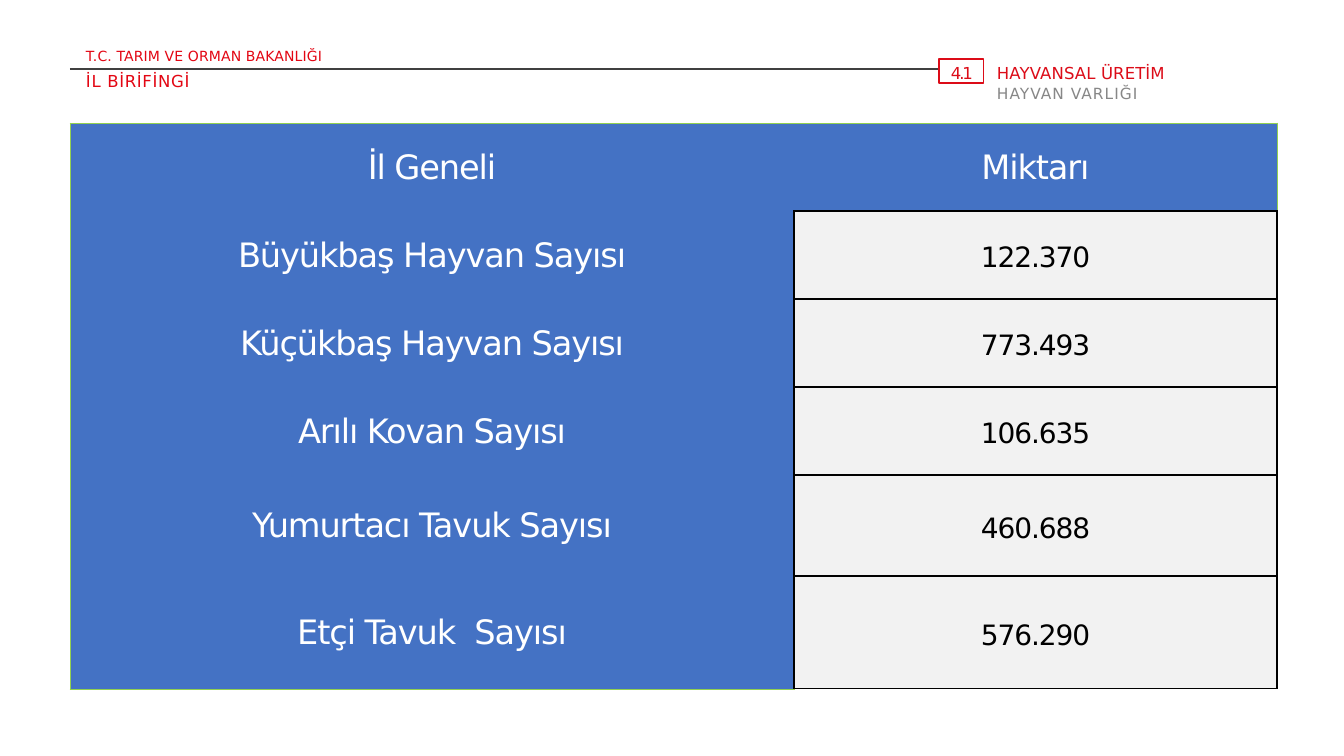
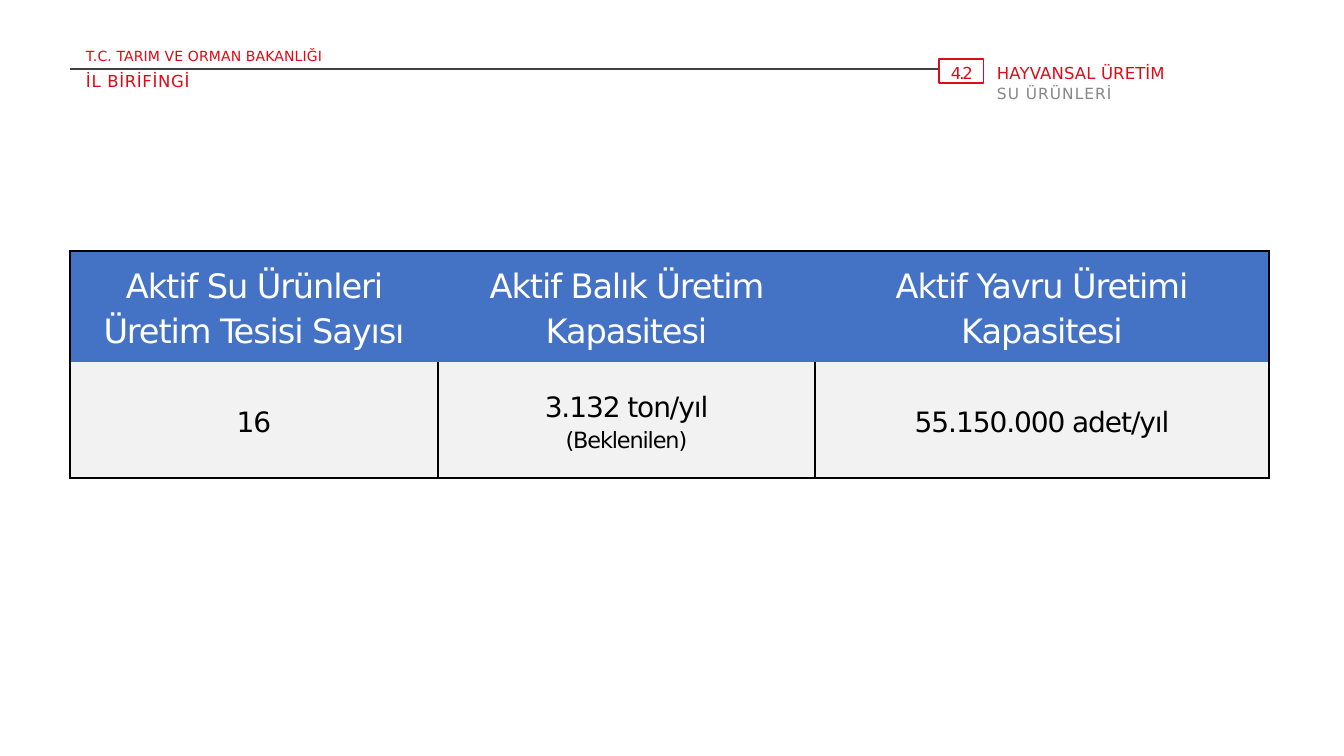
from lxml.etree import SubElement
from pptx import Presentation
from pptx.dml.color import RGBColor
from pptx.enum.shapes import MSO_CONNECTOR, MSO_SHAPE
from pptx.enum.text import MSO_ANCHOR, MSO_AUTO_SIZE, PP_ALIGN
from pptx.oxml.ns import qn
from pptx.util import Emu, Pt

PX_PER_INCH = 100.8
FONT = "DejaVu Sans"
COLORS = {
    "ministry": "E30613",
    "red": "DC0C18",
    "rule": "404040",
    "gray": "878787",
    "blue": "4472C4",
    "pale": "F2F2F2",
    "green": "92D050",
    "white": "FFFFFF",
    "black": "000000",
}
BLACK_EDGE = ("black", 1)
GREEN_EDGE = ("green", 0.5)
HEADING = {"size": 24, "color": "white", "spacing": -0.8, "align": PP_ALIGN.CENTER}
VALUE = {"size": 20, "color": "black", "spacing": -0.8, "align": PP_ALIGN.CENTER,
         "line_spacing": 1.15}


def px(length):
    return Emu(round(length * 914400 / PX_PER_INCH))


def rgb(name):
    return RGBColor.from_string(COLORS[name])


def add_text(frame, text, size, color, spacing=0, align=PP_ALIGN.LEFT,
             line_spacing=1.0, space_before=0):
    """Write one paragraph, using the frame's first one while it is empty."""
    para = frame.paragraphs[0]
    if para.runs:
        para = frame.add_paragraph()
    para.alignment = align
    para.line_spacing = line_spacing
    para.space_before = Pt(space_before)
    span = para.add_run()
    span.text = text
    span.font.name = FONT
    span.font.size = Pt(size)
    span.font.bold = False
    span.font.color.rgb = rgb(color)
    span._r.get_or_add_rPr().set("spc", str(round(spacing * 100)))


def set_frame(frame, left=0, top=1):
    frame.word_wrap = True
    frame.auto_size = MSO_AUTO_SIZE.NONE
    frame.vertical_anchor = MSO_ANCHOR.TOP
    frame.margin_left, frame.margin_top = px(left), px(top)
    frame.margin_right = frame.margin_bottom = 0


def add_label(slide, bounds, text, **text_format):
    box = slide.shapes.add_textbox(*map(px, bounds))
    set_frame(box.text_frame)
    add_text(box.text_frame, text, **text_format)


def add_rule(slide, left, right, top):
    rule = slide.shapes.add_connector(
        MSO_CONNECTOR.STRAIGHT, px(left), px(top), px(right), px(top))
    rule.line.color.rgb = rgb("rule")
    rule.line.width = Pt(0.82)
    SubElement(rule._element.spPr, qn("a:effectLst"))


def add_number_box(slide, number):
    box = slide.shapes.add_shape(MSO_SHAPE.RECTANGLE, *map(px, (939, 59, 45, 24)))
    box.shadow.inherit = False
    box.fill.background()
    box.line.color.rgb = rgb("red")
    box.line.width = Pt(0.82)
    set_frame(box.text_frame, left=12, top=4)
    add_text(box.text_frame, number, size=11.8, color="red", spacing=-2.6)


def set_title(slide, heading, subheading):
    title = slide.shapes.title
    title.left, title.top, title.width, title.height = map(px, (997, 62, 347, 42))
    set_frame(title.text_frame)
    add_text(title.text_frame, heading, size=11.8, color="red", spacing=0.1)
    add_text(title.text_frame, subheading, size=11, color="gray", spacing=0.7,
             space_before=0.8)


def add_page(deck, number, subheading):
    """Add a slide with the shared header band."""
    slide = deck.slides.add_slide(deck.slide_layouts[5])
    add_label(slide, (86, 47, 247, 19), "T.C. TARIM VE ORMAN BAKANLIĞI",
              size=10, color="ministry", spacing=0.1)
    add_label(slide, (86, 70, 256, 21), "İL BİRİFİNGİ",
              size=11.8, color="ministry", spacing=0.5)
    add_rule(slide, 70, 939, 69)
    set_title(slide, "HAYVANSAL ÜRETİM", subheading)
    add_number_box(slide, number)
    return slide


def add_grid(slide, left, top, columns, rows):
    """Add an unbanded table with the given column widths and row heights."""
    shape = slide.shapes.add_table(len(rows), len(columns), px(left), px(top),
                                   px(sum(columns)), px(sum(rows)))
    table = shape.table
    table.first_row = table.horz_banding = False
    for column, width in zip(table.columns, columns):
        column.width = px(width)
    for row, height in zip(table.rows, rows):
        row.height = px(height)
    return table


def set_borders(cell, edges):
    """Draw the edges named L, R, T and B; leave the others open."""
    properties = cell._tc.get_or_add_tcPr()
    for side in "LRTB":
        line = SubElement(properties, qn(f"a:ln{side}"))
        if side in edges:
            color, width = edges[side]
            line.set("w", str(Pt(width)))
            fill = SubElement(line, qn("a:solidFill"))
            SubElement(fill, qn("a:srgbClr")).set("val", COLORS[color])
        else:
            SubElement(line, qn("a:noFill"))


def fill_cell(cell, fill, edges, lines, margins):
    """Format a cell; lines holds pairs of text and text format."""
    set_borders(cell, edges)
    cell.fill.solid()
    cell.fill.fore_color.rgb = rgb(fill)
    cell.vertical_anchor = MSO_ANCHOR.MIDDLE
    side, top = margins
    cell.margin_left = cell.margin_right = px(side)
    cell.margin_top, cell.margin_bottom = px(top), 0
    for text, text_format in lines:
        add_text(cell.text_frame, text, **text_format)


def add_livestock_table(slide):
    records = [
        ("İl Geneli", "Miktarı"),
        ("Büyükbaş Hayvan Sayısı", "122.370"),
        ("Küçükbaş Hayvan Sayısı", "773.493"),
        ("Arılı Kovan Sayısı", "106.635"),
        ("Yumurtacı Tavuk Sayısı", "460.688"),
        ("Etçi Tavuk  Sayısı", "576.290"),
    ]
    table = add_grid(slide, 70, 123, [724, 483], [88] * 4 + [101, 113])
    last = len(records) - 1
    for index, (label, amount) in enumerate(records):
        label_edges = {"L": GREEN_EDGE}
        if index == 0:
            label_edges["T"] = GREEN_EDGE
            amount_edges = {"T": GREEN_EDGE, "R": GREEN_EDGE, "B": BLACK_EDGE}
            amount_fill, amount_format = "blue", HEADING
        else:
            label_edges["R"] = BLACK_EDGE
            amount_edges = dict.fromkeys("LRTB", BLACK_EDGE)
            amount_fill, amount_format = "pale", VALUE
        if index == last:
            label_edges["B"] = GREEN_EDGE
        fill_cell(table.cell(index, 0), "blue", label_edges,
                  [(label, HEADING)], (1, 1))
        fill_cell(table.cell(index, 1), amount_fill, amount_edges,
                  [(amount, amount_format)], (1, 1))


def add_fishery_table(slide):
    heading = {**HEADING, "line_spacing": 1.15}
    note = {**VALUE, "size": 16}
    columns = [
        ([("Aktif Su Ürünleri Üretim Tesisi Sayısı", heading)],
         [("16", VALUE)]),
        ([("Aktif Balık Üretim Kapasitesi", heading)],
         [("3.132 ton/yıl", VALUE), ("(Beklenilen)", note)]),
        ([("Aktif Yavru Üretimi", heading), ("Kapasitesi", heading)],
         [("55.150.000 adet/yıl", VALUE)]),
    ]
    table = add_grid(slide, 70, 251, [368, 377, 454], [111, 116])
    heading_sides = ["LT", "T", "TR"]
    for index, (heading_lines, value_lines) in enumerate(columns):
        fill_cell(table.cell(0, index), "blue",
                  dict.fromkeys(heading_sides[index], BLACK_EDGE),
                  heading_lines, (7, 0))
        fill_cell(table.cell(1, index), "pale",
                  dict.fromkeys("LRB", BLACK_EDGE), value_lines, (7, 0))


def main():
    deck = Presentation()
    deck.slide_width, deck.slide_height = px(1344), px(756)
    add_livestock_table(add_page(deck, "4 . 1", "HAYVAN VARLIĞI"))
    add_fishery_table(add_page(deck, "4 . 2", "SU ÜRÜNLERİ"))
    deck.save("out.pptx")


if __name__ == "__main__":
    main()
